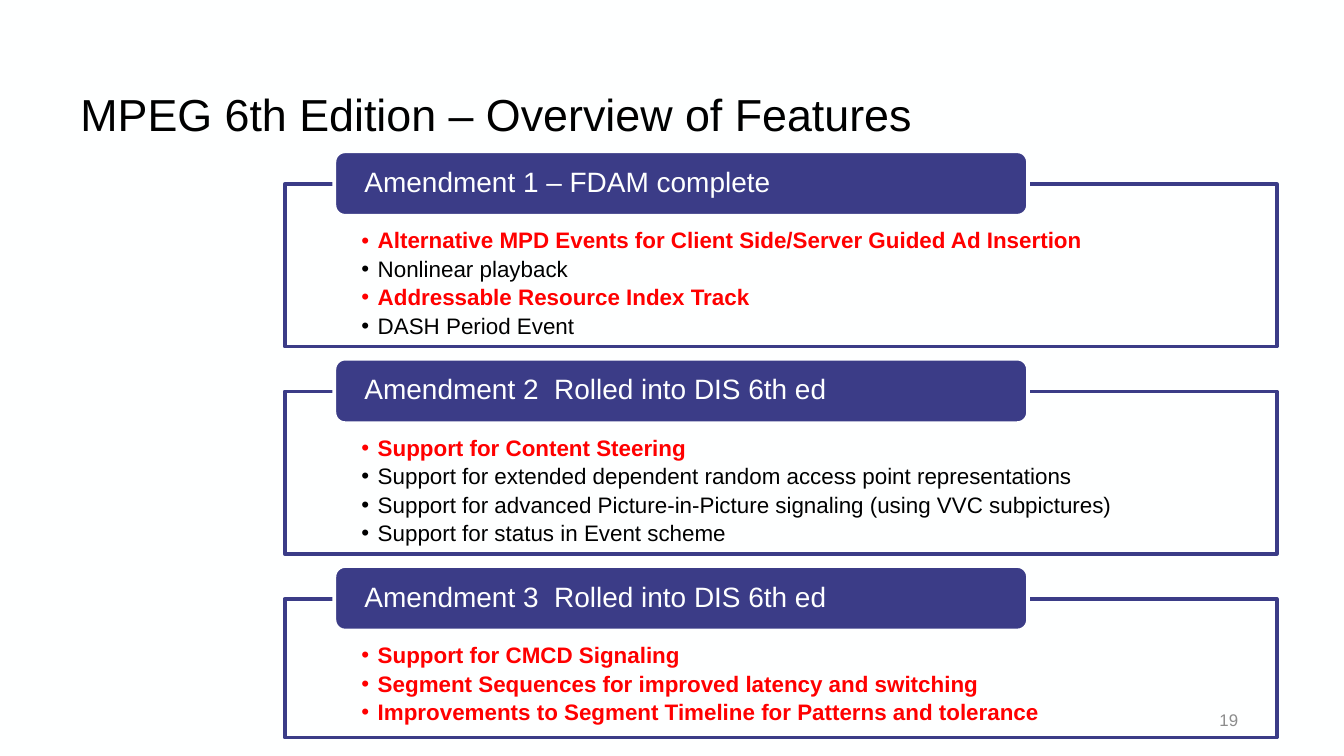
from lxml import etree
from pptx import Presentation
from pptx.dml.color import RGBColor
from pptx.enum.shapes import MSO_SHAPE
from pptx.enum.text import MSO_ANCHOR, PP_ALIGN
from pptx.oxml.ns import qn
from pptx.util import Cm, Pt

RECTANGLE = MSO_SHAPE.RECTANGLE
ROUNDED = MSO_SHAPE.ROUNDED_RECTANGLE
TOP, MIDDLE, BOTTOM = MSO_ANCHOR.TOP, MSO_ANCHOR.MIDDLE, MSO_ANCHOR.BOTTOM
LEFT, RIGHT = PP_ALIGN.LEFT, PP_ALIGN.RIGHT

INDIGO = RGBColor(0x3B, 0x3C, 0x87)
PAPER = RGBColor(0xFE, 0xFF, 0xFF)
RED = RGBColor(0xFF, 0x00, 0x00)
BLACK = RGBColor(0x00, 0x00, 0x00)
GRAY = RGBColor(0x8C, 0x8C, 0x8C)

FONT = "Arial"
FIRST_PANEL_TOP = 3.48
PANEL_PITCH = 3.92
LINE_HEIGHT = 0.45

AMENDMENTS = [
    ("Amendment 1 – FDAM complete", [
        ("Alternative MPD Events for Client Side/Server Guided Ad Insertion", True),
        ("Nonlinear playback", False),
        ("Addressable Resource Index Track", True),
        ("DASH Period Event", False),
    ]),
    ("Amendment 2  Rolled into DIS 6th ed", [
        ("Support for Content Steering", True),
        ("Support for extended dependent random access point representations", False),
        ("Support for advanced Picture-in-Picture signaling (using VVC subpictures)", False),
        ("Support for status in Event scheme", False),
    ]),
    ("Amendment 3  Rolled into DIS 6th ed", [
        ("Support for CMCD Signaling", True),
        ("Segment Sequences for improved latency and switching", True),
        ("Improvements to Segment Timeline for Patterns and tolerance", True),
    ]),
]


def set_frame(frame, anchor, insets):
    frame.word_wrap = True
    frame.vertical_anchor = anchor
    left, top, right, bottom = (Cm(inset) for inset in insets)
    frame.margin_left, frame.margin_top = left, top
    frame.margin_right, frame.margin_bottom = right, bottom


def write(paragraph, text, size, color, bold=False, align=LEFT, spacing=0.9):
    paragraph.alignment = align
    paragraph.line_spacing = spacing
    run = paragraph.add_run()
    run.text = text
    run.font.name = FONT
    run.font.size = Pt(size)
    run.font.bold = bold
    run.font.color.rgb = color


def add_bullet(paragraph):
    properties = paragraph._p.get_or_add_pPr()
    properties.set("marL", str(Cm(0.31)))
    properties.set("indent", str(Cm(-0.31)))
    etree.SubElement(properties, qn("a:buFont")).set("typeface", FONT)
    etree.SubElement(properties, qn("a:buChar")).set("char", "•")


def add_label(slide, box, text, size, color, anchor, align=LEFT, spacing=1.0):
    label = slide.shapes.add_textbox(*(Cm(length) for length in box))
    set_frame(label.text_frame, anchor, (0.25, 0.13, 0.25, 0.13))
    write(label.text_frame.paragraphs[0], text, size, color,
          align=align, spacing=spacing)


def add_block(slide, preset, box, fill, outline):
    block = slide.shapes.add_shape(preset, *(Cm(length) for length in box))
    block.shadow.inherit = False
    block.fill.solid()
    block.fill.fore_color.rgb = fill
    block.line.color.rgb = outline
    block.line.width = Pt(2)
    return block


def add_feature_panel(slide, top, features):
    height = 1.27 + LINE_HEIGHT * len(features)
    panel = add_block(slide, RECTANGLE, (5.38, top, 18.75, height), PAPER, INDIGO)
    color = panel.fill._xPr.find(qn("a:solidFill"))[0]
    etree.SubElement(color, qn("a:alpha")).set("val", "90000")
    frame = panel.text_frame
    set_frame(frame, TOP, (1.45, 0.86, 1.45, 0.23))
    for index, (feature, highlighted) in enumerate(features):
        paragraph = frame.add_paragraph() if index else frame.paragraphs[0]
        write(paragraph, feature, 12, RED if highlighted else BLACK, highlighted)
        paragraph.space_after = Pt(2.3)
        add_bullet(paragraph)


def add_heading(slide, panel_top, text):
    heading = add_block(slide, ROUNDED, (6.32, panel_top - 0.62, 13.11, 1.22),
                        INDIGO, PAPER)
    set_frame(heading.text_frame, MIDDLE, (0.51, 0, 0.51, 0))
    write(heading.text_frame.paragraphs[0], text, 15, PAPER)


def main():
    deck = Presentation()
    deck.slide_width, deck.slide_height = Cm(25.4), Cm(14.29)
    slide = deck.slides.add_slide(deck.slide_layouts[6])
    slide.background.fill.solid()
    slide.background.fill.fore_color.rgb = PAPER

    add_label(slide, (1.27, 0.51, 22.86, 2.29),
              "MPEG 6th Edition – Overview of Features", 24, BLACK, BOTTOM,
              spacing=0.9)
    for index, (heading, features) in enumerate(AMENDMENTS):
        top = FIRST_PANEL_TOP + index * PANEL_PITCH
        add_feature_panel(slide, top, features)
        add_heading(slide, top, heading)
    add_label(slide, (17.93, 13.23, 5.72, 0.76), "19", 9, GRAY, MIDDLE, RIGHT)

    deck.save("out.pptx")


if __name__ == "__main__":
    main()
